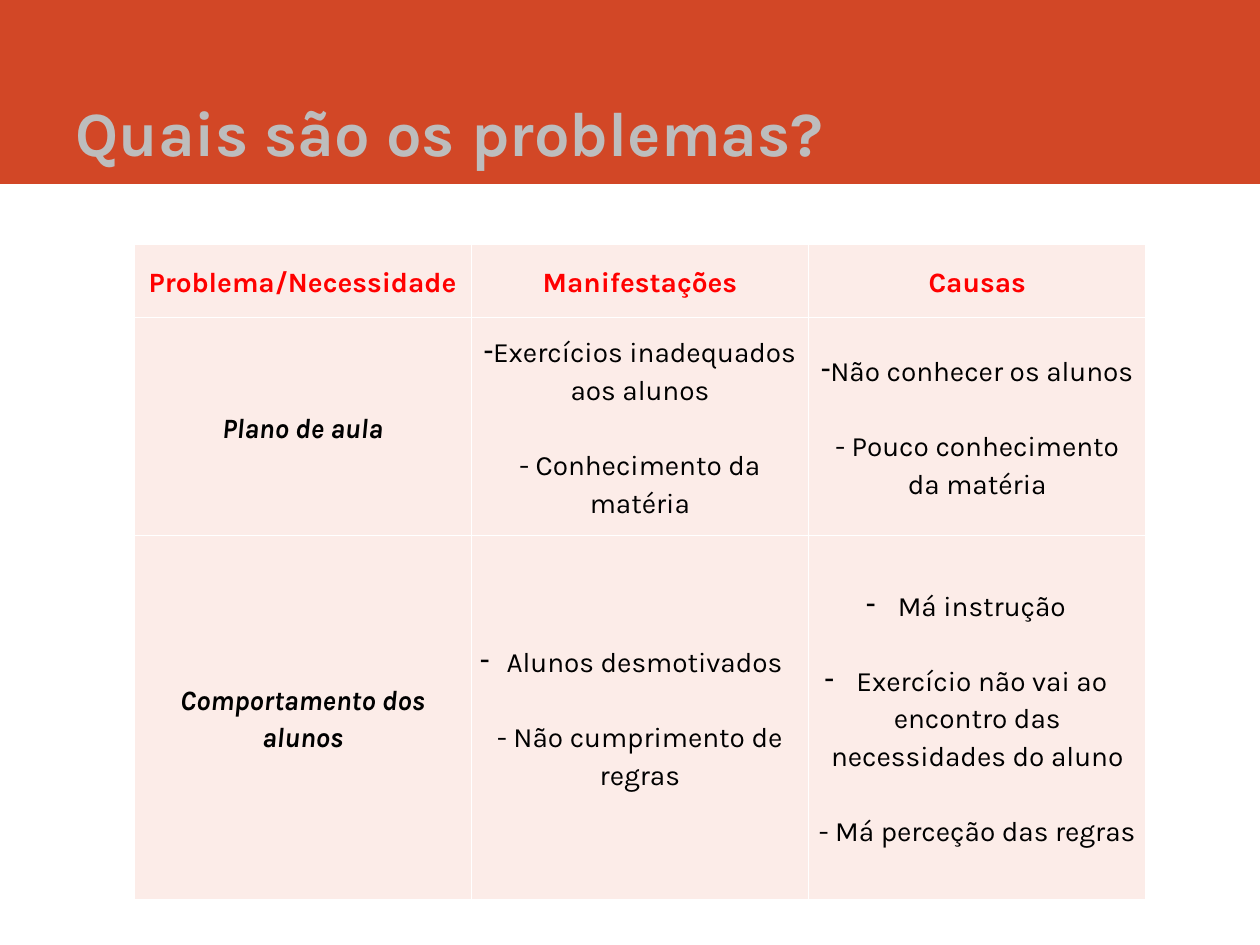
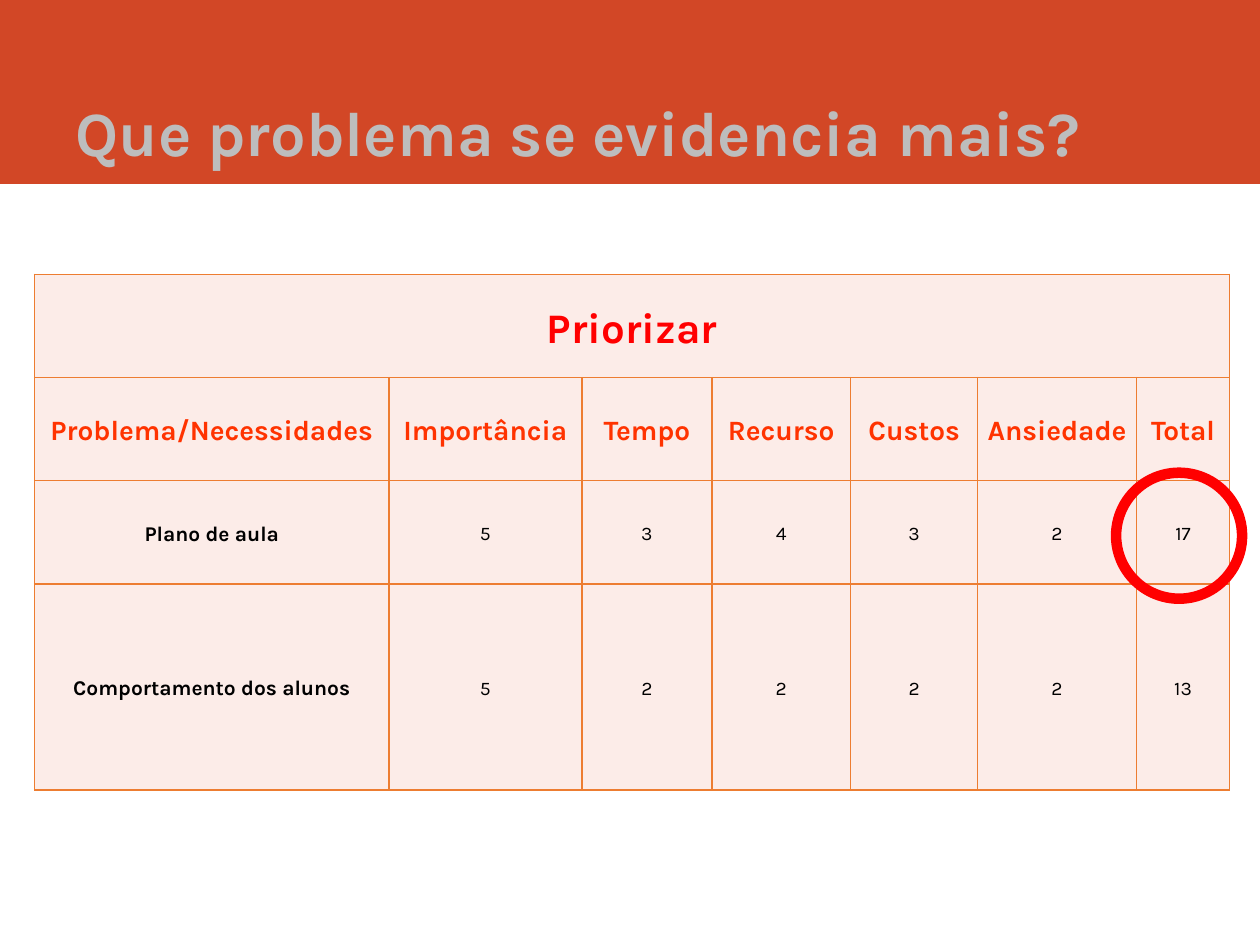
from pptx import Presentation
from pptx.dml.color import RGBColor
from pptx.enum.shapes import MSO_SHAPE
from pptx.enum.text import MSO_ANCHOR, PP_ALIGN
from pptx.oxml.ns import qn
from pptx.util import Cm, Pt
from lxml.etree import SubElement, Element

FONT = "Karla"
BAND = RGBColor(0xD2, 0x47, 0x26)
TITLE = RGBColor(0xBD, 0xBD, 0xBD)
WHITE = RGBColor(0xFF, 0xFF, 0xFF)
BLACK = RGBColor(0, 0, 0)
RED = RGBColor(0xFF, 0, 0)
HEADING = RGBColor(0xFF, 0x33, 0)
CELL = RGBColor(0xFC, 0xEC, 0xE8)
ORANGE = RGBColor(0xED, 0x7D, 0x31)

SLIDE_W, SLIDE_H, BAND_H = 25.4, 19.05, 3.71
PARAGRAPH_GAP = Pt(21.5)
TIGHT, HANGING = 0, -0.64

# A cell is a string or a list of paragraphs; a paragraph is
# a string or a pair of text and bullet indent in cm.
PROBLEMS = [
    ["Problema/Necessidade", "Manifestações", "Causas"],
    ["Plano de aula",
     [("Exercícios inadequados aos alunos", TIGHT), "- Conhecimento da matéria"],
     [("Não conhecer os alunos", TIGHT), "- Pouco conhecimento da matéria"]],
    ["Comportamento dos alunos",
     [("Alunos desmotivados", HANGING), "- Não cumprimento de regras"],
     [("Má instrução", HANGING),
      ("Exercício não vai ao encontro das necessidades do aluno", HANGING),
      "- Má perceção das regras"]],
]
PRIORITIES = [
    ["Priorizar", "", "", "", "", "", ""],
    ["Problema/Necessidades", "Importância", "Tempo", "Recurso", "Custos",
     "Ansiedade", "Total"],
    ["Plano de aula", "5", "3", "4", "3", "2", "17"],
    ["Comportamento dos alunos", "5", "2", "2", "2", "2", "13"],
]


def problem_style(row, col):
    """Return size, colour, bold and italic of a cell."""
    if row == 0:
        return 16, RED, True, False
    return 16, BLACK, col == 0, col == 0


def priority_style(row, col):
    """Return size, colour, bold and italic of a cell."""
    if row < 2:
        return (24, RED, True, False) if row == 0 else (16, HEADING, True, False)
    return (12, BLACK, True, False) if col == 0 else (11, BLACK, False, False)


def format_run(r, size, color, bold, italic=False):
    r.font.name = FONT
    r.font.size = Pt(size)
    r.font.color.rgb = color
    r.font.bold = bold
    r.font.italic = italic


def add_titled_slide(prs, title):
    s = prs.slides.add_slide(prs.slide_layouts[6])
    band = s.shapes.add_shape(MSO_SHAPE.RECTANGLE, 0, 0, Cm(SLIDE_W), Cm(BAND_H))
    band.shadow.inherit = False
    band.fill.solid()
    band.fill.fore_color.rgb = BAND
    band.line.fill.background()

    tf = s.shapes.add_textbox(Cm(1.27), 0, Cm(22.38), Cm(3.4)).text_frame
    tf.word_wrap = True
    tf.vertical_anchor = MSO_ANCHOR.BOTTOM
    tf.margin_bottom = 0
    tf.text = title
    format_run(tf.paragraphs[0].runs[0], 36, TITLE, True)
    return s


def set_borders(cell, color):
    tcPr = cell._tc.get_or_add_tcPr()
    for i, side in enumerate(("lnL", "lnR", "lnT", "lnB")):
        ln = Element(qn(f"a:{side}"), w=str(Pt(1)))
        SubElement(SubElement(ln, qn("a:solidFill")), qn("a:srgbClr"), val=str(color))
        tcPr.insert(i, ln)


def set_bullet(p, indent):
    pPr = p._p.get_or_add_pPr()
    pPr.set("marL", "0")
    pPr.set("indent", str(Cm(indent)))
    SubElement(pPr, qn("a:buChar"), char="-")


def fill_cell(cell, content, style, border):
    cell.fill.solid()
    cell.fill.fore_color.rgb = CELL
    set_borders(cell, border)
    cell.vertical_anchor = MSO_ANCHOR.MIDDLE
    cell.margin_left = cell.margin_right = Cm(0.18)
    cell.margin_top = cell.margin_bottom = 0
    tf = cell.text_frame
    for i, item in enumerate([content] if isinstance(content, str) else content):
        text, indent = (item, None) if isinstance(item, str) else item
        p = tf.add_paragraph() if i else tf.paragraphs[0]
        p.text = text
        p.alignment = PP_ALIGN.CENTER
        p.line_spacing = 1.15
        if i:
            p.space_before = PARAGRAPH_GAP
        if indent is not None:
            set_bullet(p, indent)
        for r in p.runs:
            format_run(r, *style)


def add_grid(s, left, top, widths, heights, rows, style_of, border):
    table = s.shapes.add_table(len(heights), len(widths), Cm(left), Cm(top),
                               Cm(sum(widths)), Cm(sum(heights))).table
    table.first_row = table.horz_banding = False
    for column, width in zip(table.columns, widths):
        column.width = Cm(width)
    for i, (row, height) in enumerate(zip(rows, heights)):
        table.rows[i].height = Cm(height)
        for j, content in enumerate(row):
            fill_cell(table.cell(i, j), content, style_of(i, j), border)
    return table


def add_ring(s, left, top, size):
    ring = s.shapes.add_shape(MSO_SHAPE.OVAL, Cm(left), Cm(top), Cm(size), Cm(size))
    ring.shadow.inherit = False
    ring.fill.background()
    ring.line.color.rgb = RED
    ring.line.width = Pt(6)


def main():
    prs = Presentation()
    prs.slide_width, prs.slide_height = Cm(SLIDE_W), Cm(SLIDE_H)

    s = add_titled_slide(prs, "Quais são os problemas?")
    add_grid(s, 2.7, 4.93, [6.8] * 3, [1.47, 4.39, 7.34],
             PROBLEMS, problem_style, WHITE)

    s = add_titled_slide(prs, "Que problema se evidencia mais?")
    table = add_grid(s, 0.7, 5.53, [7.14, 3.89, 2.62, 2.8, 2.56, 3.2, 1.88],
                     [2.08, 2.08, 2.08, 4.16], PRIORITIES, priority_style, ORANGE)
    table.cell(0, 0).merge(table.cell(0, 6))
    add_ring(s, 22.5, 9.53, 2.54)

    prs.save("out.pptx")


if __name__ == "__main__":
    main()
